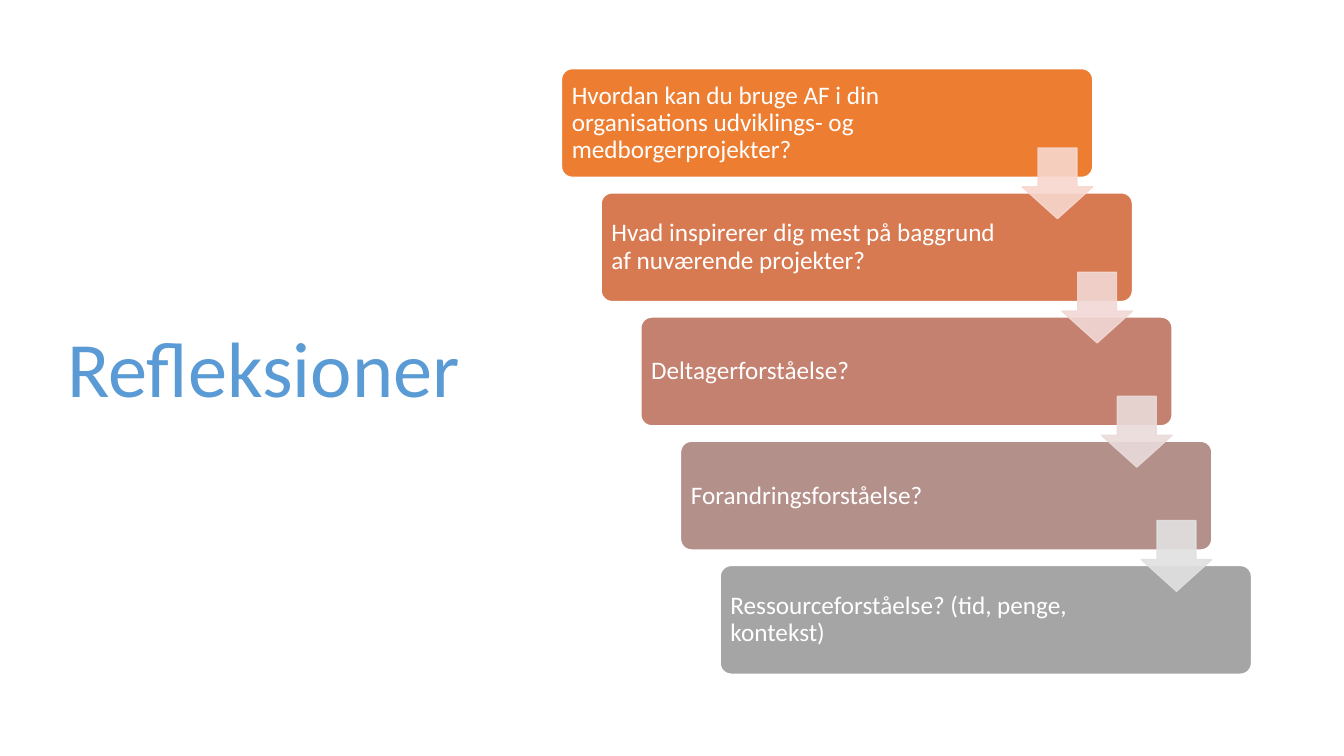
from lxml.etree import SubElement
from pptx import Presentation
from pptx.dml.color import RGBColor
from pptx.enum.shapes import MSO_SHAPE
from pptx.enum.text import MSO_ANCHOR, PP_ALIGN
from pptx.oxml.ns import qn
from pptx.util import Cm, Pt

WHITE = RGBColor(0xFF, 0xFF, 0xFF)
TITLE_BLUE = RGBColor(0x5B, 0x9B, 0xD5)
STEP_COLORS = [
    RGBColor(0xED, 0x7D, 0x31),
    RGBColor(0xD8, 0x7A, 0x51),
    RGBColor(0xC4, 0x81, 0x70),
    RGBColor(0xB4, 0x90, 0x8B),
    RGBColor(0xA5, 0xA5, 0xA5),
]
ARROW_COLORS = [
    RGBColor(0xF8, 0xD7, 0xCE),
    RGBColor(0xF1, 0xD8, 0xD4),
    RGBColor(0xE9, 0xDB, 0xDA),
    RGBColor(0xE1, 0xE1, 0xE1),
]
QUESTIONS = [
    "Hvordan kan du bruge AF i din organisations udviklings- og medborgerprojekter?",
    "Hvad inspirerer dig mest på baggrund af nuværende projekter?",
    "Deltagerforståelse?",
    "Forandringsforståelse?",
    "Ressourceforståelse? (tid, penge, kontekst)",
]
STEP_RIGHT = 1.0
STEP_DOWN = 3.13


def add_text(slide, text, left, top, width, height, size, color, inset=None):
    box = slide.shapes.add_textbox(Cm(left), Cm(top), Cm(width), Cm(height))
    frame = box.text_frame
    frame.word_wrap = True
    frame.vertical_anchor = MSO_ANCHOR.MIDDLE
    if inset is not None:
        frame.margin_left = frame.margin_right = Cm(inset)
        frame.margin_top = frame.margin_bottom = Cm(inset)
    paragraph = frame.paragraphs[0]
    paragraph.alignment = PP_ALIGN.LEFT
    paragraph.line_spacing = 0.9
    run = paragraph.add_run()
    run.text = text
    run.font.name = "Calibri"
    run.font.size = Pt(size)
    run.font.color.rgb = color


def add_filled_shape(slide, kind, left, top, width, height, fill, line, adjustments):
    shape = slide.shapes.add_shape(kind, Cm(left), Cm(top), Cm(width), Cm(height))
    shape.shadow.inherit = False
    shape.fill.solid()
    shape.fill.fore_color.rgb = fill
    shape.line.color.rgb = line
    shape.line.width = Pt(1)
    for index, value in enumerate(adjustments):
        shape.adjustments[index] = value
    return shape


def add_step(slide, index, question):
    left = 14.15 + index * STEP_RIGHT
    top = 1.73 + index * STEP_DOWN
    text_width = 10.11 if index == 0 else 10.44
    add_filled_shape(slide, MSO_SHAPE.ROUNDED_RECTANGLE, left, top, 13.39, 2.74,
                     STEP_COLORS[index], WHITE, [0.1])
    add_text(slide, question, left + 0.08, top + 0.08, text_width, 2.59, 18, WHITE, 0.18)


def add_arrow(slide, index, color):
    left = 25.76 + index * STEP_RIGHT
    top = 3.73 + index * STEP_DOWN
    arrow = add_filled_shape(slide, MSO_SHAPE.DOWN_ARROW, left, top, 1.78, 1.78,
                             color, color, [0.55, 0.45])
    for color_element in arrow.element.spPr.iter(qn("a:srgbClr")):
        SubElement(color_element, qn("a:alpha"), val="90000")


def main():
    presentation = Presentation()
    presentation.slide_width = Cm(33.87)
    presentation.slide_height = Cm(19.05)
    slide = presentation.slides.add_slide(presentation.slide_layouts[6])
    add_text(slide, "Refleksioner", 1.45, 1.73, 10.57, 15.29, 56, TITLE_BLUE)
    for index, question in enumerate(QUESTIONS):
        add_step(slide, index, question)
    for index, color in enumerate(ARROW_COLORS):
        add_arrow(slide, index, color)
    presentation.save("out.pptx")


if __name__ == "__main__":
    main()
